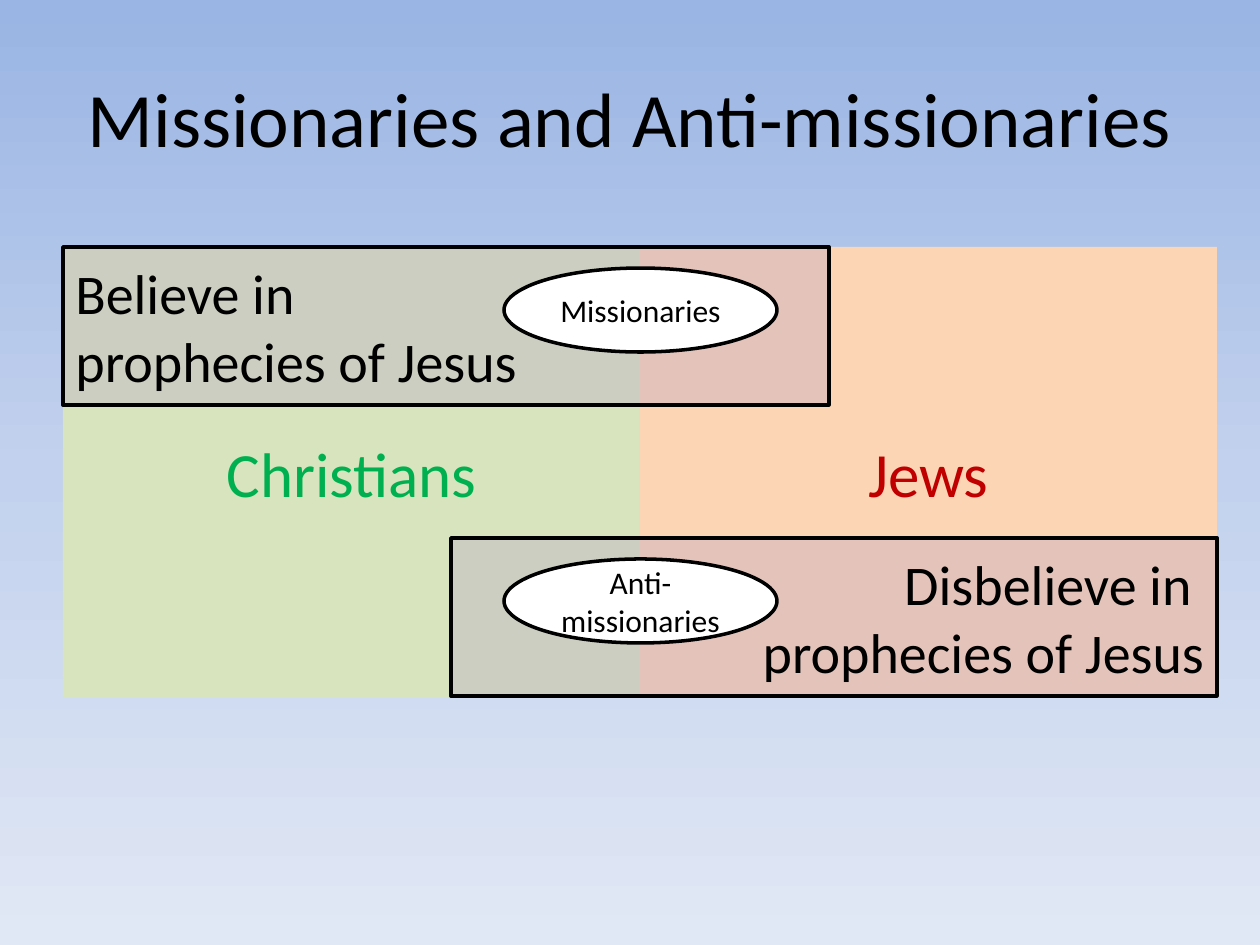
import copy
import pptx
import pptx.util
import pptx.oxml.ns
import pptx.dml.color
import pptx.enum.shapes
import pptx.enum.text
import lxml.etree

SCALE = 914400 / 126
HUES = {
    "black": "000000", "white": "FFFFFF", "lime": "D7E4BD",
    "peach": "FCD5B5", "green": "00B050", "red": "C00000",
    "mauve": "B3A2C7", "top": "9AB5E4", "mid": "C2D1ED", "base": "E1E8F5",
}
KIND = pptx.enum.shapes.MSO_SHAPE
ALIGN = pptx.enum.text.PP_ALIGN


def px(*nums):
    return [pptx.util.Emu(round(n * SCALE)) for n in nums]


def hue(name):
    return pptx.dml.color.RGBColor.from_string(HUES[name])


class Deck:
    font = "Calibri"

    def __init__(self, wide, high):
        self.show = pptx.Presentation()
        self.show.slide_width, self.show.slide_height = px(wide, high)
        self.slide = self.show.slides.add_slide(self.show.slide_layouts[5])

    def back(self, names):
        fill = self.slide.background.fill
        fill.gradient()
        fill.gradient_angle = 270
        stops = self.slide.element.xpath(".//p:bg//a:gsLst")[0]
        while len(stops) < len(names):
            stops.append(copy.deepcopy(stops[-1]))
        for i, (stop, name) in enumerate(zip(fill.gradient_stops, names)):
            stop.position = i / (len(names) - 1)
            stop.color.rgb = hue(name)

    def label(self, shape, lines, size, color, align):
        frame = shape.text_frame
        frame.word_wrap = True
        frame.vertical_anchor = pptx.enum.text.MSO_ANCHOR.MIDDLE
        frame.text = "\n".join(lines)
        for para in frame.paragraphs:
            para.alignment = align
            para.font.name = self.font
            para.font.size = pptx.util.Pt(size)
            para.font.color.rgb = hue(color)

    def title(self, box, text):
        shape = self.slide.shapes.title
        shape.left, shape.top, shape.width, shape.height = px(*box)
        self.label(shape, [text], 44, "black", ALIGN.CENTER)

    def shape(self, kind, box, fill, lines, size, color="black",
              align=ALIGN.CENTER, edge=True, alpha=None):
        shape = self.slide.shapes.add_shape(kind, *px(*box))
        shape.shadow.inherit = False
        shape.fill.solid()
        shape.fill.fore_color.rgb = hue(fill)
        if alpha:
            tint = shape.element.xpath("./p:spPr/a:solidFill/a:srgbClr")[0]
            node = lxml.etree.SubElement(tint, pptx.oxml.ns.qn("a:alpha"))
            node.set("val", str(alpha * 1000))
        if edge:
            shape.line.color.rgb = hue("black")
            shape.line.width = pptx.util.Pt(2)
        else:
            shape.line.fill.background()
        self.label(shape, lines, size, color, align)


def main():
    deck = Deck(1260, 945)
    deck.back(["top", "mid", "base"])
    deck.title((63, 38, 1134, 158), "Missionaries and Anti-missionaries")

    left, top, half, high = 63, 247, 577, 451
    faiths = [("Christians", "lime", "green"), ("Jews", "peach", "red")]
    for i, (text, fill, color) in enumerate(faiths):
        deck.shape(KIND.RECTANGLE, (left + i * half, top, half, high),
                   fill, [text], 36, color, edge=False)

    wide, drop = 766, 291
    views = [("Believe in", ALIGN.LEFT, left),
             ("Disbelieve in ", ALIGN.RIGHT, left + 2 * half - wide)]
    for i, (text, align, x) in enumerate(views):
        deck.shape(KIND.RECTANGLE, (x, top + i * drop, wide, 158), "mauve",
                   [text, "prophecies of Jesus"], 32, align=align, alpha=32)

    for i, text in enumerate(["Missionaries", "Anti-missionaries"]):
        deck.shape(KIND.OVAL, (504, top + 21 + i * drop, 273, 84),
                   "white", [text], 18)

    deck.show.save("out.pptx")


if __name__ == "__main__":
    main()
